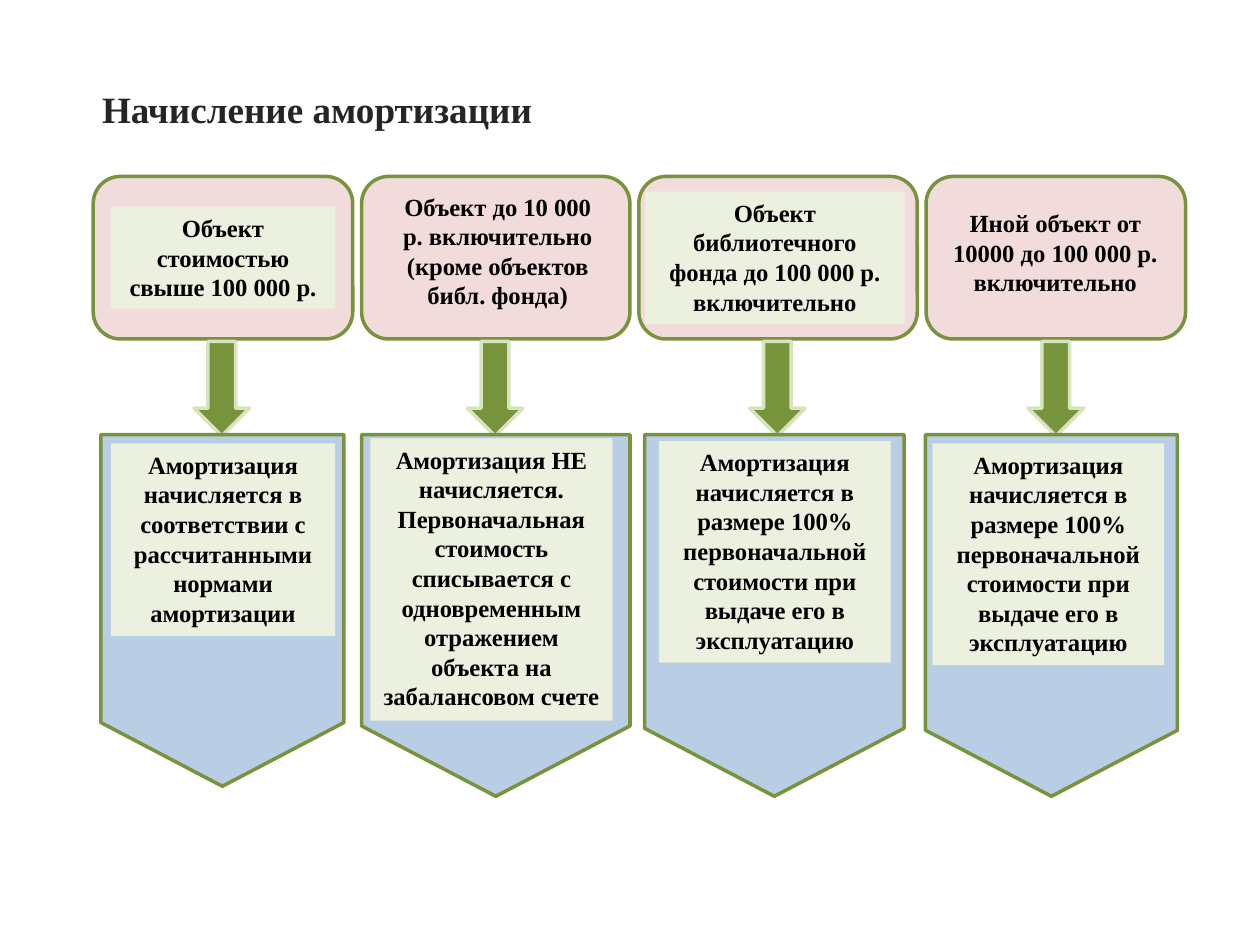
from dataclasses import dataclass

from pptx import Presentation
from pptx.dml.color import RGBColor
from pptx.enum.shapes import MSO_SHAPE
from pptx.enum.text import MSO_ANCHOR, MSO_AUTO_SIZE, PP_ALIGN
from pptx.util import Inches, Pt


@dataclass(frozen=True)
class Theme:
    font: str = "Times New Roman"
    title_size: float = 21.2
    label_size: float = 14.1
    line_width: float = 2
    title: str = "252523"
    text: str = "000000"
    green: str = "77933C"
    pale_green: str = "D7E4BD"
    label: str = "EBF1DE"
    pink: str = "F2DCDB"
    blue: str = "B9CDE5"


THEME = Theme()
COLUMNS, ROWS = 100, 75
CELL = Inches(10) // COLUMNS  # square grid cell

# Grid rows shared by all four cases
CARD_TOP, CARD_ROWS = 14, 12.9
ARROW_TOP, ARROW_COLUMNS, ARROW_ROWS = 27.1, 4.4, 7.5
PENTAGON_TOP = 34.5
POINT_SHARE = 0.262

EXPENSED = ("Амортизация начисляется в размере 100% первоначальной "
            "стоимости при выдаче его в эксплуатацию")

# Each case: card and pentagon as (left, columns), arrow left,
# labels as (left, top, columns, rows)
CASES = [
    dict(card=(7.4, 20.6), arrow=15.4, pentagon=(8, 19.3), pentagon_rows=27.9,
         object="Объект стоимостью свыше 100 000 р.",
         object_at=(8.8, 16.4, 17.8, 8.1), object_fill=THEME.label,
         rule="Амортизация начисляется в соответствии с рассчитанными "
              "нормами амортизации",
         rule_at=(8.8, 35.2, 17.8, 15.3)),
    dict(card=(28.7, 21.3), arrow=37.1, pentagon=(28.7, 21.3), pentagon_rows=28.7,
         object="Объект до 10 000 р. включительно (кроме объектов библ. фонда)",
         object_at=(30.3, 14.7, 18.4, 10.5), object_fill=THEME.pink,
         rule="Амортизация НЕ начисляется. Первоначальная стоимость "
              "списывается с одновременным отражением объекта на "
              "забалансовом счете",
         rule_at=(29.4, 34.8, 19.2, 22.4)),
    dict(card=(50.7, 22.1), arrow=59.5, pentagon=(51.15, 20.6), pentagon_rows=28.7,
         object="Объект библиотечного фонда до 100 000 р. включительно",
         object_at=(51.2, 15.2, 20.6, 10.5), object_fill=THEME.label,
         rule=EXPENSED, rule_at=(52.3, 35, 18.4, 17.6)),
    dict(card=(73.5, 20.6), arrow=81.6, pentagon=(73.45, 20), pentagon_rows=28.7,
         object="Иной объект от 10000 до 100 000 р. включительно",
         object_at=(74.4, 16, 18.7, 8.1), object_fill=THEME.pink,
         rule=EXPENSED, rule_at=(74, 35.2, 18.4, 17.6)),
]


def set_all(target, values):
    for name, value in values.items():
        setattr(target, name, value)


def cells(*lengths):
    return [round(length * CELL) for length in lengths]


def add_block(page, kind, place, fill, line=None):
    """Add a filled preset shape at (left, top, columns, rows)."""
    block = page.shapes.add_shape(kind, *cells(*place))
    block.shadow.inherit = False
    block.fill.solid()
    block.fill.fore_color.rgb = RGBColor.from_string(fill)
    if line:
        block.line.color.rgb = RGBColor.from_string(line)
        block.line.width = Pt(THEME.line_width)
    else:
        block.line.fill.background()
    return block


def write(frame, text, size, color, frame_format, para_format):
    set_all(frame, dict(word_wrap=True, vertical_anchor=MSO_ANCHOR.TOP) | frame_format)
    para = frame.paragraphs[0]
    set_all(para, para_format)
    span = para.add_run()
    span.text = text
    set_all(span.font, dict(name=THEME.font, size=Pt(size), bold=True))
    span.font.color.rgb = RGBColor.from_string(color)


def add_label(page, text, place, fill):
    box = add_block(page, MSO_SHAPE.RECTANGLE, place, fill)
    write(box.text_frame, text, THEME.label_size, THEME.text,
          dict(auto_size=MSO_AUTO_SIZE.SHAPE_TO_FIT_TEXT),
          dict(alignment=PP_ALIGN.CENTER))


def add_pentagon(page, left, top, columns, rows):
    """Add a pentagon pointing down: a home plate turned by 90 degrees."""
    shift = (rows - columns) / 2
    plate = add_block(page, MSO_SHAPE.PENTAGON,
                      (left - shift, top + shift, rows, columns),
                      THEME.blue, THEME.green)
    plate.rotation = 90
    plate.adjustments[0] = POINT_SHARE


def add_title(page, text):
    title = page.shapes.title
    left, top, width, height = cells(8.1, 5.1, 88.5, 5.3)
    set_all(title, dict(left=left, top=top, width=width, height=height))
    write(title.text_frame, text, THEME.title_size, THEME.title,
          dict(margin_left=0, margin_top=0, margin_right=0, margin_bottom=0,
               auto_size=MSO_AUTO_SIZE.NONE),
          dict(alignment=PP_ALIGN.LEFT, line_spacing=1.5))


def add_case(page, case):
    # Object card with its label
    left, columns = case["card"]
    add_block(page, MSO_SHAPE.ROUNDED_RECTANGLE,
              (left, CARD_TOP, columns, CARD_ROWS), THEME.pink, THEME.green)
    add_label(page, case["object"], case["object_at"], case["object_fill"])
    # Arrow down to the rule
    add_block(page, MSO_SHAPE.DOWN_ARROW,
              (case["arrow"], ARROW_TOP, ARROW_COLUMNS, ARROW_ROWS),
              THEME.green, THEME.pale_green)
    # Depreciation rule
    left, columns = case["pentagon"]
    add_pentagon(page, left, PENTAGON_TOP, columns, case["pentagon_rows"])
    add_label(page, case["rule"], case["rule_at"], THEME.label)


def main():
    deck = Presentation()
    set_all(deck, dict(slide_width=COLUMNS * CELL, slide_height=ROWS * CELL))
    page = deck.slides.add_slide(deck.slide_layouts[5])
    add_title(page, "Начисление амортизации")
    for case in CASES:
        add_case(page, case)
    deck.save("out.pptx")


if __name__ == "__main__":
    main()
